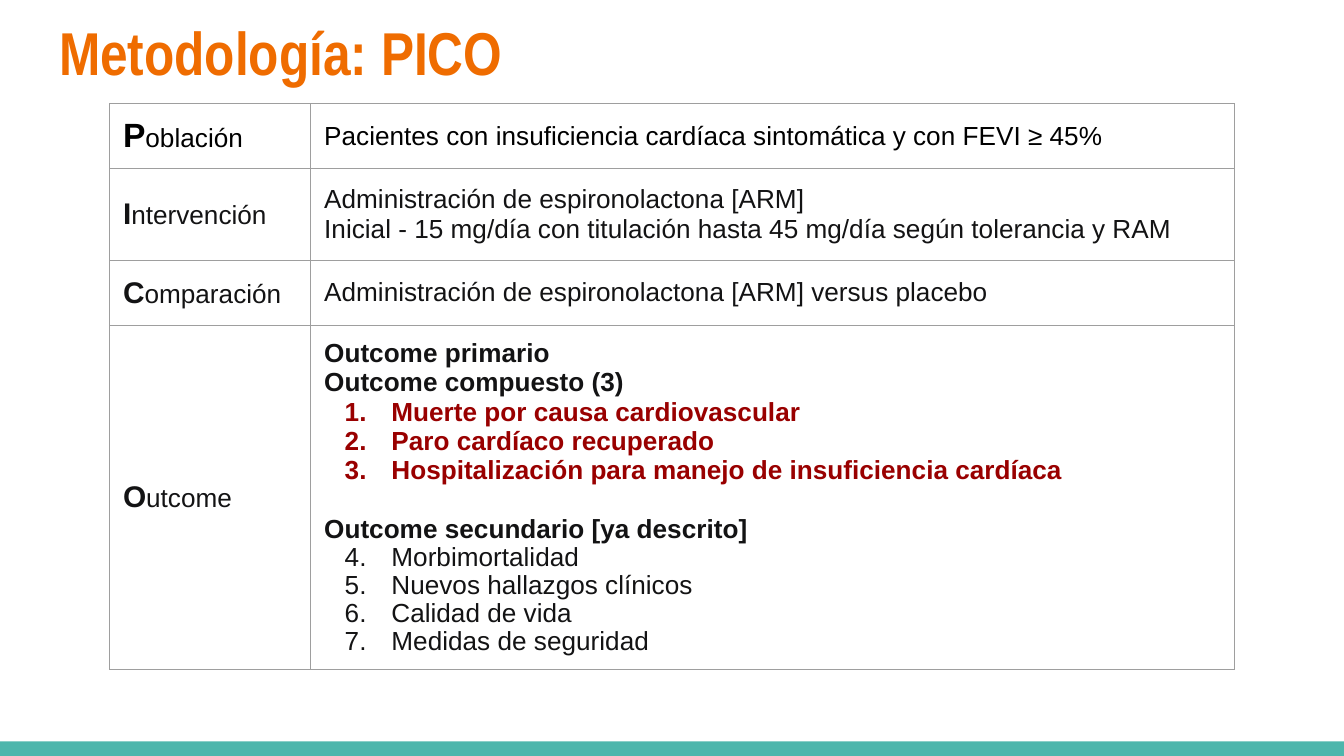
from dataclasses import dataclass

from lxml.etree import SubElement
from pptx import Presentation
from pptx.dml.color import RGBColor
from pptx.enum.shapes import MSO_SHAPE
from pptx.enum.text import MSO_ANCHOR, MSO_AUTO_SIZE, PP_ALIGN
from pptx.oxml.ns import qn
from pptx.util import Pt

BLACK, INK, RED = "000000", "131314", "990000"
ORANGE, TEAL, GREY = "EF6C00", "4DB6AC", "9E9E9E"
COLUMN_WIDTHS = (107.8, 494.7)
INSET = Pt(7.2)


@dataclass
class Line:
    text: str
    color: str = INK
    bold: bool = False
    start_at: int = 0  # first number of the list; 0 for plain text
    space_before: float = 0
    spacing: float = 1


@dataclass
class Row:
    label: str
    lines: list[Line]
    height: float
    initial_size: float = 16
    label_color: str = INK


PRIMARY = ("Muerte por causa cardiovascular", "Paro cardíaco recuperado",
           "Hospitalización para manejo de insuficiencia cardíaca")
SECONDARY = ("Morbimortalidad", "Nuevos hallazgos clínicos", "Calidad de vida",
             "Medidas de seguridad")

ROWS = [
    Row("Población",
        [Line("Pacientes con insuficiencia cardíaca sintomática y con FEVI ≥ 45%", BLACK)],
        34.5, 18, BLACK),
    Row("Intervención",
        [Line("Administración de espironolactona [ARM]"),
         Line("Inicial - 15 mg/día con titulación hasta 45 mg/día según tolerancia y RAM")],
        49.4),
    Row("Comparación", [Line("Administración de espironolactona [ARM] versus placebo")], 34.7),
    Row("Outcome",
        [Line("Outcome primario", bold=True),
         Line("Outcome compuesto (3)", bold=True),
         *[Line(text, RED, True, start_at=1) for text in PRIMARY],
         Line("Outcome secundario [ya descrito]", bold=True, space_before=15.7),
         *[Line(text, start_at=4, spacing=0.95) for text in SECONDARY]],
        184.3),
]


def rgb(color: str) -> RGBColor:
    return RGBColor.from_string(color)


def format_span(span, size: float, color: str, bold: bool, font: str = "Arial") -> None:
    span.font.name = font
    span.font.size = Pt(size)
    span.font.bold = bold
    span.font.color.rgb = rgb(color)


def add_number(para, color: str, start_at: int) -> None:
    """Make the paragraph a numbered item with a hanging indent."""
    properties = para._p.get_or_add_pPr()
    properties.set("marL", str(Pt(36)))
    properties.set("indent", str(-Pt(25)))
    bullet_color = SubElement(properties, qn("a:buClr"))
    SubElement(bullet_color, qn("a:srgbClr"), val=color)
    SubElement(properties, qn("a:buFont"), typeface="Arial")
    SubElement(properties, qn("a:buAutoNum"), type="arabicPeriod", startAt=str(start_at))


def format_cell(cell) -> None:
    """Set insets, borders and an empty fill."""
    cell.vertical_anchor = MSO_ANCHOR.MIDDLE
    cell.margin_left = cell.margin_right = INSET
    cell.margin_top = cell.margin_bottom = INSET
    properties = cell._tc.get_or_add_tcPr()
    for side in ("lnL", "lnR", "lnT", "lnB"):
        border = SubElement(properties, qn(f"a:{side}"), w=str(Pt(0.75)))
        fill = SubElement(border, qn("a:solidFill"))
        SubElement(fill, qn("a:srgbClr"), val=GREY)
    cell.fill.background()


def write_label(cell, row: Row) -> None:
    """Write the label with a large bold initial."""
    para = cell.text_frame.paragraphs[0]
    para.text = row.label[0]
    format_span(para.runs[0], row.initial_size, row.label_color, True)
    rest = para.add_run()
    rest.text = row.label[1:]
    format_span(rest, 14, row.label_color, False)


def write_lines(cell, lines: list[Line]) -> None:
    cell.text_frame.text = "\n".join(line.text for line in lines)
    for para, line in zip(cell.text_frame.paragraphs, lines):
        format_span(para.runs[0], 14, line.color, line.bold)
        para.line_spacing = line.spacing
        para.space_before = Pt(line.space_before)
        if line.start_at:
            add_number(para, line.color, line.start_at)


def add_title(page, text: str) -> None:
    title = page.shapes.title
    title.left, title.top, title.width, title.height = Pt(24.5), Pt(0), Pt(671), Pt(55.4)
    frame = title.text_frame
    frame.text = text
    frame.auto_size = MSO_AUTO_SIZE.NONE
    frame.vertical_anchor = MSO_ANCHOR.MIDDLE
    frame.margin_left = frame.margin_right = INSET
    frame.margin_top = frame.margin_bottom = INSET
    para = frame.paragraphs[0]
    para.alignment = PP_ALIGN.LEFT
    format_span(para.runs[0], 32.4, ORANGE, True, "Arial Narrow")


def add_pico_table(page, rows: list[Row]) -> None:
    table = page.shapes.add_table(
        len(rows), len(COLUMN_WIDTHS), Pt(58.7), Pt(55.6),
        Pt(sum(COLUMN_WIDTHS)), Pt(sum(row.height for row in rows))).table
    table.first_row = table.horz_banding = False
    for column, width in zip(table.columns, COLUMN_WIDTHS):
        column.width = Pt(width)
    for index, row in enumerate(rows):
        table.rows[index].height = Pt(row.height)
        label_cell, text_cell = table.rows[index].cells
        write_label(label_cell, row)
        write_lines(text_cell, row.lines)
        format_cell(label_cell)
        format_cell(text_cell)


def add_footer_bar(page) -> None:
    bar = page.shapes.add_shape(MSO_SHAPE.RECTANGLE, Pt(0), Pt(397.2), Pt(720), Pt(7.8))
    bar.shadow.inherit = False
    bar.fill.solid()
    bar.fill.fore_color.rgb = rgb(TEAL)
    bar.line.fill.background()


def main() -> None:
    deck = Presentation()
    deck.slide_width, deck.slide_height = Pt(720), Pt(405)
    page = deck.slides.add_slide(deck.slide_layouts[5])
    add_footer_bar(page)
    add_title(page, "Metodología: PICO")
    add_pico_table(page, ROWS)
    deck.save("out.pptx")


if __name__ == "__main__":
    main()
